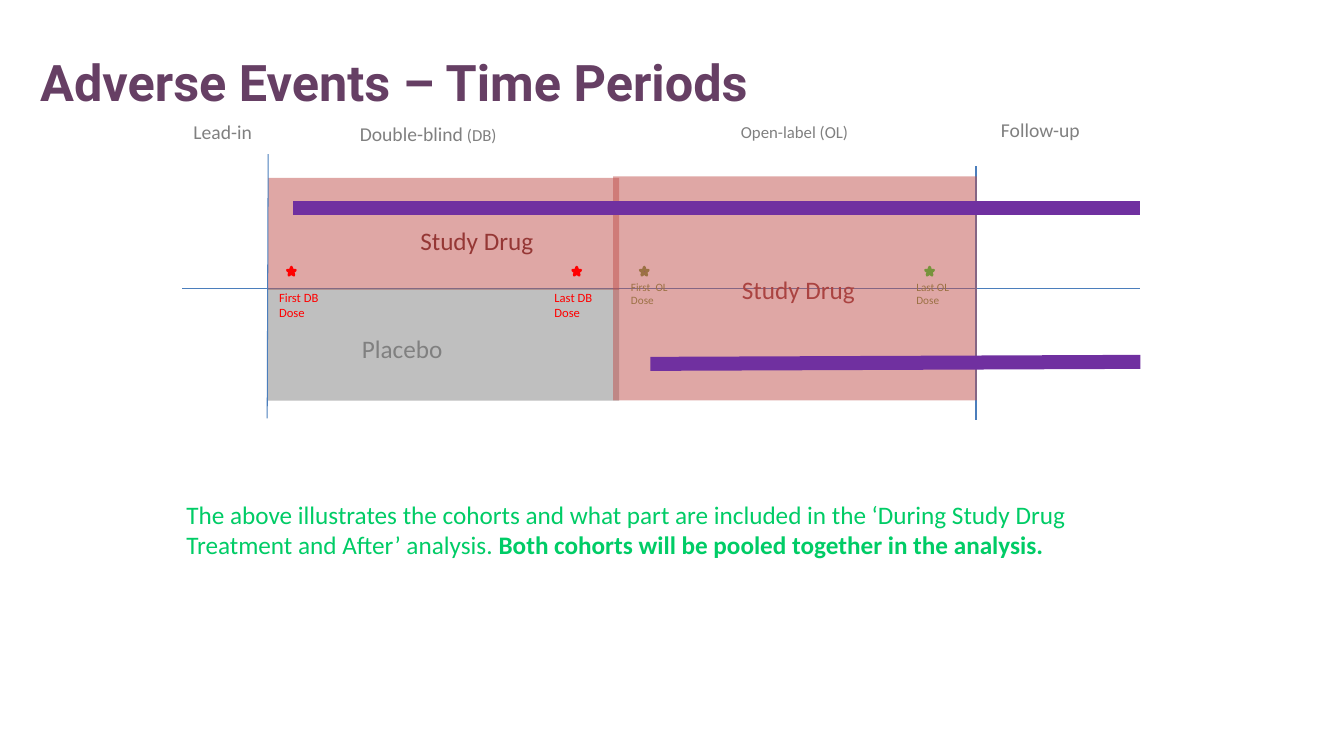
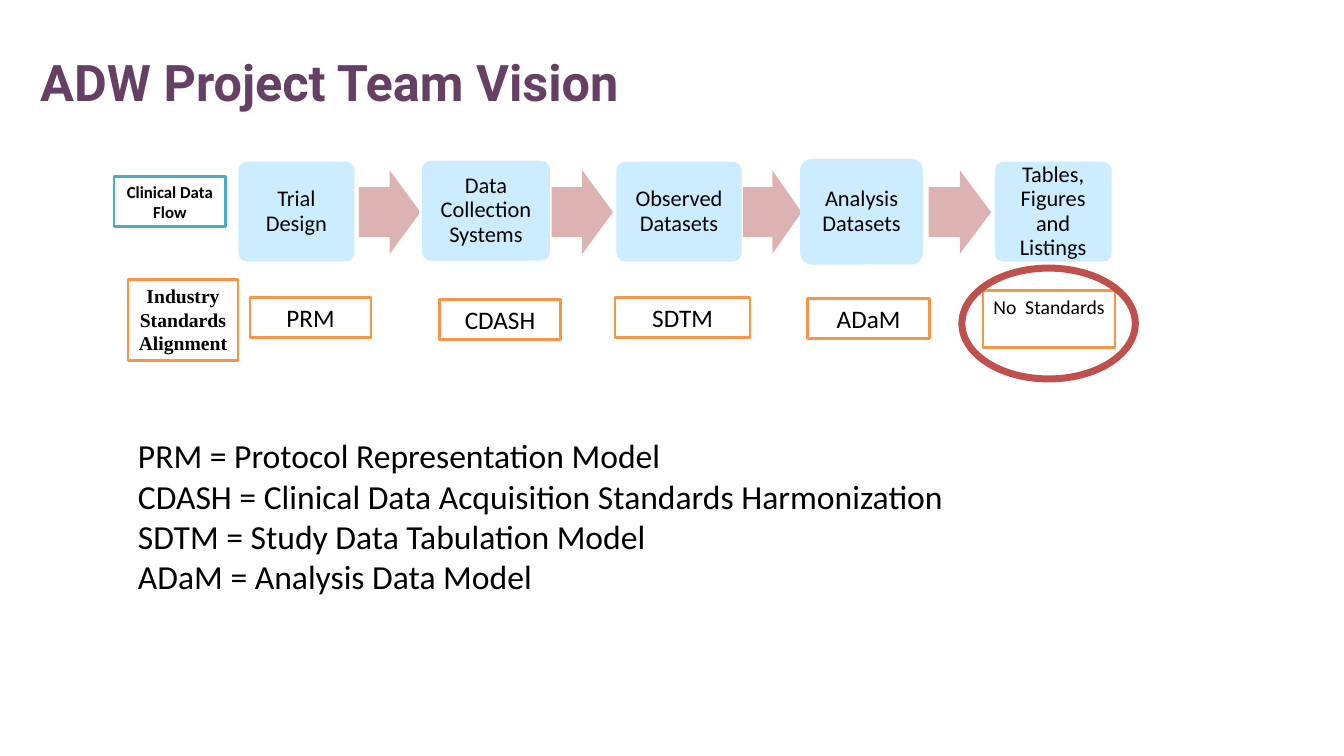
"""Builds two slides on clinical trial periods and data standards."""
from dataclasses import dataclass

from pptx import Presentation
from pptx.dml.color import RGBColor
from pptx.enum.shapes import MSO_CONNECTOR, MSO_SHAPE
from pptx.enum.text import MSO_ANCHOR, PP_ALIGN
from pptx.oxml.ns import qn
from pptx.util import Emu, Pt
from lxml import etree

EMU_PER_PX = 9144
STRAIGHT = MSO_CONNECTOR.STRAIGHT
RECTANGLE = MSO_SHAPE.RECTANGLE
ROUNDED = MSO_SHAPE.ROUNDED_RECTANGLE
ARROW = MSO_SHAPE.RIGHT_ARROW
STAR = MSO_SHAPE.STAR_5_POINT
OVAL = MSO_SHAPE.OVAL
LEFT, CENTER = PP_ALIGN.LEFT, PP_ALIGN.CENTER
TOP, MIDDLE = MSO_ANCHOR.TOP, MSO_ANCHOR.MIDDLE

BODY_FONT, TITLE_FONT, SERIF_FONT = "Calibri", "Roboto", "Times New Roman"
BLACK, WHITE, GRAY = "000000", "FFFFFF", "808080"
PLUM, PURPLE, BLUE = "663F64", "7030A0", "4B7EBC"
BRICK, DARK_RED, RED = "C0504D", "953735", "FF0000"
OLIVE, GREEN, ORANGE = "77933C", "00CC66", "F79646"
TEAL, SKY, ROSE = "4BACC6", "CCECFF", "DCB3B2"


@dataclass
class Label:
    left: int
    top: int
    width: int
    height: int
    text: str
    size: int
    color: str
    wrap: bool = True


@dataclass
class Line:
    start: tuple[int, int]
    end: tuple[int, int]
    color: str
    points: float
    opacity: int = 100


@dataclass
class Star:
    left: int
    fill: str
    outline: str


@dataclass
class Stage:
    left: int
    top: int
    width: int
    text: str
    arrow_left: int = 0
    arrow_width: int = 0
    outline: str = WHITE


@dataclass
class Standard:
    left: int
    top: int
    width: int
    height: int
    text: str
    size: int = 18
    outline: str = ORANGE
    bold: bool = False
    font: str = BODY_FONT


PERIODS = [
    Label(182, 114, 83, 40, "Lead-in", 14, GRAY),
    Label(725, 116, 147, 57, "Open-label (OL)", 12, GRAY),
    Label(983, 112, 133, 40, "Follow-up", 14, GRAY),
]
BASE_LINES = [
    Line((181, 286), (1131, 286), BLUE, 0.75),
    Line((968, 165), (968, 417), BLUE, 0.75),
    Line((266, 232), (614, 232), BRICK, 80, 50),
    Line((265, 342), (614, 342), GRAY, 80, 50),
    Line((266, 153), (265, 415), BLUE, 0.75),
]
ARMS = [
    Label(349, 326, 115, 40, "Placebo", 18, GRAY),
    Label(407, 219, 142, 40, "Study Drug", 18, DARK_RED),
    Label(726, 267, 139, 40, "Study Drug", 18, DARK_RED),
]
DOSES = [
    Label(616, 273, 57, 37, "First  OL\nDose", 8, OLIVE, False),
    Label(899, 273, 53, 37, "Last OL\nDose", 8, OLIVE, False),
    Label(267, 283, 60, 40, "First DB\nDose", 9, RED, False),
    Label(540, 283, 58, 40, "Last DB\nDose", 9, RED, False),
]
STARS = [Star(635, PURPLE, OLIVE), Star(285, RED, RED), Star(568, RED, RED)]
LAST_OPEN_STAR = Star(918, OLIVE, OLIVE)
OPEN_LABEL_BAND = Line((608, 286), (969, 286), BRICK, 160, 50)
ANALYSIS_BARS = [
    Line((291, 206), (1131, 206), PURPLE, 10),
    Line((645, 361), (1131, 359), PURPLE, 10),
]
STAGES = [
    Stage(235, 159, 118, "Trial Design", 356, 61),
    Stage(417, 158, 130, "Data Collection Systems", 547, 61),
    Stage(610, 159, 127, "Observed Datasets", 737, 58),
    Stage(795, 159, 119, "Analysis Datasets", 921, 62, SKY),
    Stage(985, 159, 119, "Tables, Figures and Listings"),
]
STANDARDS = [
    Standard(113, 175, 111, 50, "Clinical Data\nFlow", 12, TEAL, True),
    Standard(127, 277, 109, 81, "Industry\nStandards\nAlignment", 14,
             bold=True, font=SERIF_FONT),
    Standard(248, 295, 120, 40, "PRM"),
    Standard(436, 297, 120, 40, "CDASH"),
    Standard(610, 295, 134, 40, "SDTM"),
    Standard(801, 296, 121, 40, "ADaM"),
    Standard(975, 288, 131, 57, "No  Standards", 14),
]
GLOSSARY = "\n".join([
    "PRM = Protocol Representation Model",
    "CDASH = Clinical Data Acquisition Standards Harmonization",
    "SDTM = Study Data Tabulation Model",
    "ADaM = Analysis Data Model",
])


def px(length: int) -> Emu:
    return Emu(length * EMU_PER_PX)


def rgb(value: str) -> RGBColor:
    return RGBColor.from_string(value)


def add_span(para, text: str, *, size: int, color: str, bold: bool = False,
             font: str = BODY_FONT) -> None:
    span = para.add_run()
    span.text = text
    span.font.name = font
    span.font.size = Pt(size)
    span.font.bold = bold
    span.font.color.rgb = rgb(color)


def write(box, text: str, *, align=LEFT, anchor=TOP, wrap: bool = True,
          line_spacing: float = 1.0, **span_format):
    frame = box.text_frame
    frame.word_wrap = wrap
    frame.vertical_anchor = anchor
    for index, line in enumerate(text.split("\n")):
        para = frame.add_paragraph() if index else frame.paragraphs[0]
        para.alignment = align
        para.line_spacing = line_spacing
        add_span(para, line, **span_format)
    return para


def add_box(page, left: int, top: int, width: int, height: int):
    return page.shapes.add_textbox(px(left), px(top), px(width), px(height))


def add_label(page, label: Label):
    box = add_box(page, label.left, label.top, label.width, label.height)
    return write(box, label.text, size=label.size, color=label.color,
                 wrap=label.wrap)


def add_shape(page, kind, left: int, top: int, width: int, height: int, *,
              fill: str | None = None, outline: str | None = None,
              points: float = 2):
    shape = page.shapes.add_shape(kind, px(left), px(top), px(width), px(height))
    shape.shadow.inherit = False
    if fill:
        shape.fill.solid()
        shape.fill.fore_color.rgb = rgb(fill)
    else:
        shape.fill.background()
    if outline:
        shape.line.color.rgb = rgb(outline)
        shape.line.width = Pt(points)
    else:
        shape.line.fill.background()
    return shape


def add_line(page, line: Line) -> None:
    connector = page.shapes.add_connector(
        STRAIGHT, *map(px, line.start), *map(px, line.end))
    connector.line.color.rgb = rgb(line.color)
    connector.line.width = Pt(line.points)
    properties = connector.element.spPr
    if line.opacity < 100:
        paint = properties.find(".//" + qn("a:srgbClr"))
        alpha = etree.SubElement(paint, qn("a:alpha"))
        alpha.set("val", str(line.opacity * 1000))
    etree.SubElement(properties, qn("a:effectLst"))


def add_star(page, star: Star) -> None:
    add_shape(page, STAR, star.left, 265, 8, 8, fill=star.fill,
              outline=star.outline)


def add_stage(page, stage: Stage) -> None:
    box = add_shape(page, ROUNDED, stage.left, stage.top, stage.width, 102,
                    fill=SKY, outline=stage.outline)
    box.adjustments[0] = 0.1
    write(box, stage.text, size=16, color=BLACK, align=CENTER, anchor=MIDDLE,
          line_spacing=0.9)
    if stage.arrow_width:
        arrow = add_shape(page, ARROW, stage.arrow_left, 169,
                          stage.arrow_width, 83, fill=ROSE)
        arrow.adjustments[0] = 0.6
        arrow.adjustments[1] = 0.5


def add_standard(page, standard: Standard) -> None:
    box = add_shape(page, RECTANGLE, standard.left, standard.top,
                    standard.width, standard.height, fill=WHITE,
                    outline=standard.outline)
    write(box, standard.text, size=standard.size, color=BLACK, align=CENTER,
          wrap=False, bold=standard.bold, font=standard.font)


def add_page(deck, title: str):
    page = deck.slides.add_slide(deck.slide_layouts[6])
    write(add_box(page, 30, 46, 1278, 111), title, size=36, color=PLUM,
          bold=True, font=TITLE_FONT)
    return page


def build_time_periods(deck) -> None:
    page = add_page(deck, "Adverse Events – Time Periods")
    for period in PERIODS:
        add_label(page, period)
    para = add_label(page, Label(347, 116, 163, 37, "Double-blind", 14, GRAY))
    add_span(para, " (DB)", size=12, color=GRAY)
    for line in BASE_LINES:
        add_line(page, line)
    for label in ARMS + DOSES:
        add_label(page, label)
    para = add_label(page, Label(
        175, 490, 949, 71, "The above illustrates the cohorts and what part "
        "are included in the ‘During Study Drug Treatment and After’ "
        "analysis. ", 18, GREEN))
    add_span(para, "Both cohorts will be pooled together in the analysis.",
             size=18, color=GREEN, bold=True)
    for star in STARS:
        add_star(page, star)
    add_line(page, OPEN_LABEL_BAND)
    add_star(page, LAST_OPEN_STAR)
    for bar in ANALYSIS_BARS:
        add_line(page, bar)


def build_team_vision(deck) -> None:
    page = add_page(deck, "ADW Project Team Vision")
    for stage in STAGES:
        add_stage(page, stage)
    for standard in STANDARDS:
        add_standard(page, standard)
    add_shape(page, OVAL, 954, 266, 172, 110, outline=BRICK, points=5)
    add_label(page, Label(127, 427, 989, 172, GLOSSARY, 24, BLACK))


def main() -> None:
    deck = Presentation()
    deck.slide_width, deck.slide_height = px(1333), px(750)
    build_time_periods(deck)
    build_team_vision(deck)
    deck.save("out.pptx")


if __name__ == "__main__":
    main()
